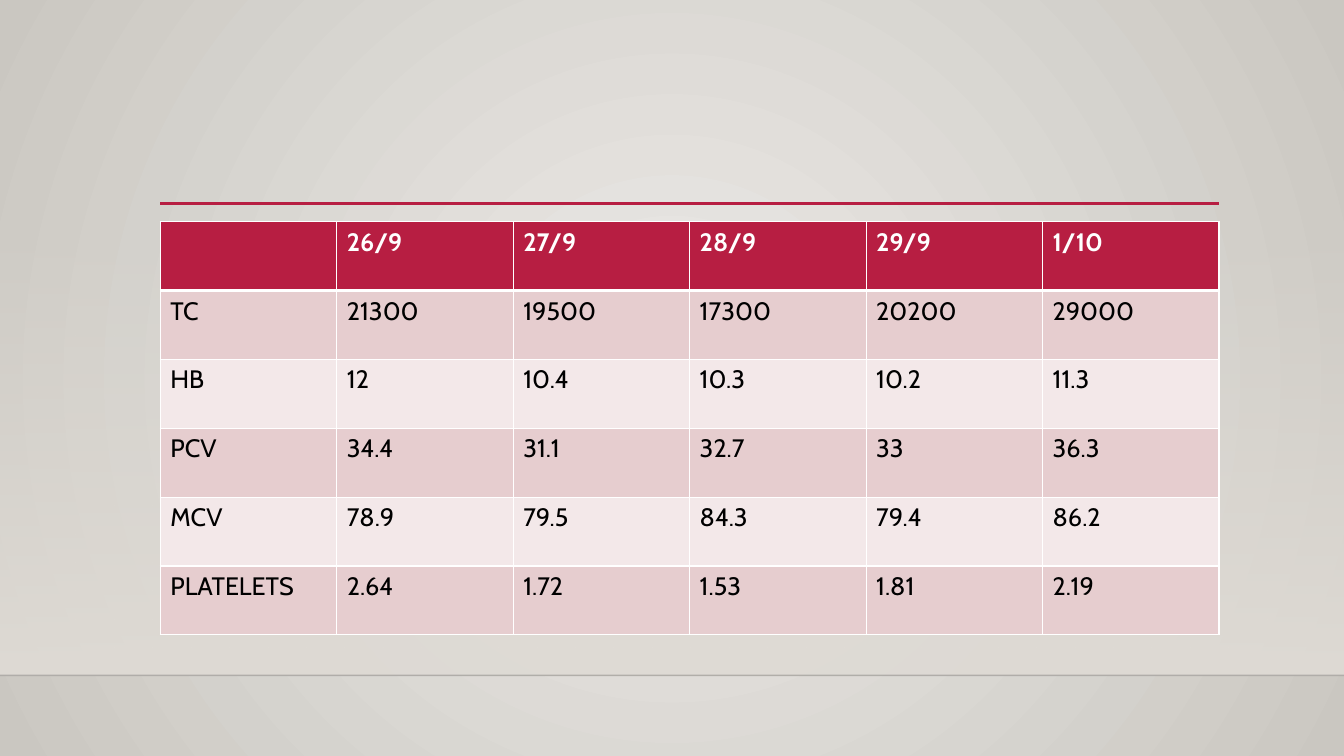
from pptx import Presentation
from pptx.dml.color import RGBColor
from pptx.enum.shapes import MSO_CONNECTOR, MSO_SHAPE
from pptx.oxml import parse_xml
from pptx.oxml.ns import nsdecls, qn
from pptx.util import Inches, Pt

CRIMSON = RGBColor(0xB7, 0x1E, 0x42)
ROSE = RGBColor(0xE6, 0xCD, 0xCF)
PALE_ROSE = RGBColor(0xF3, 0xE8, 0xE9)
WHITE = RGBColor(0xFF, 0xFF, 0xFF)
BLACK = RGBColor(0, 0, 0)
NEAR_BLACK = RGBColor(0, 0, 1)
LIGHT_STONE = RGBColor(0xEC, 0xEA, 0xE7)
DARK_STONE = RGBColor(0xCA, 0xC7, 0xC1)
STONE = RGBColor(0xDF, 0xDB, 0xD5)

FONT = "Cabin"
WIDTH, HEIGHT = Inches(13.33), Inches(7.5)
FLOOR = Inches(6.7)
RADIAL = ('<a:path path="circle"><a:fillToRect l="50000" t="50000" '
          'r="50000" b="50000"/></a:path>')
DOWNWARD = '<a:lin ang="5400000" scaled="0"/>'

BLOOD_COUNTS = [
    ["", "26/9", "27/9", "28/9", "29/9", "1/10"],
    ["TC", "21300", "19500", "17300", "20200", "29000"],
    ["HB", "12", "10.4", "10.3", "10.2", "11.3"],
    ["PCV", "34.4", "31.1", "32.7", "33", "36.3"],
    ["MCV", "78.9", "79.5", "84.3", "79.4", "86.2"],
    ["PLATELETS", "2.64", "1.72", "1.53", "1.81", "2.19"],
]


def set_gradient(parent, start, end, direction, start_alpha=100):
    """Replace the solid fill of parent with a two-stop gradient."""
    solid = parent.find(qn("a:solidFill"))
    parent.replace(solid, parse_xml(
        f'<a:gradFill {nsdecls("a")} rotWithShape="1"><a:gsLst>'
        f'<a:gs pos="0"><a:srgbClr val="{start}">'
        f'<a:alpha val="{start_alpha * 1000}"/></a:srgbClr></a:gs>'
        f'<a:gs pos="100000"><a:srgbClr val="{end}"/></a:gs>'
        f'</a:gsLst>{direction}</a:gradFill>'))


def add_rule(s, left, top, width, color, weight, opacity=100):
    line = s.shapes.add_connector(MSO_CONNECTOR.STRAIGHT,
                                  left, top, left + width, top)
    line.line.color.rgb = color
    line.line.width = Pt(weight)
    spPr = line._element.spPr
    spPr.append(parse_xml(f'<a:effectLst {nsdecls("a")}/>'))
    if opacity < 100:
        spPr.find(".//" + qn("a:srgbClr")).append(parse_xml(
            f'<a:alpha {nsdecls("a")} val="{opacity * 1000}"/>'))


def add_backdrop(s):
    # Radial background
    s.background.fill.solid()
    set_gradient(s.element.find(".//" + qn("p:bgPr")),
                 LIGHT_STONE, DARK_STONE, RADIAL)
    # Wall fading in towards the floor line
    top = Inches(2.21)
    wall = s.shapes.add_shape(MSO_SHAPE.RECTANGLE, 0, top, WIDTH, FLOOR - top)
    wall.shadow.inherit = False
    wall.line.fill.background()
    wall.fill.solid()
    set_gradient(wall._element.spPr, STONE, STONE, DOWNWARD, start_alpha=0)
    add_rule(s, 0, FLOOR, WIDTH, NEAR_BLACK, 1, opacity=20)


def set_borders(cell, weights):
    """Draw white borders; weights maps a side (L, R, T, B) to points."""
    tcPr = cell._tc.get_or_add_tcPr()
    for i, side in enumerate("LRTB"):
        tcPr.insert(i, parse_xml(
            f'<a:ln{side} {nsdecls("a")} w="{Pt(weights[side])}"><a:solidFill>'
            f'<a:srgbClr val="{WHITE}"/></a:solidFill></a:ln{side}>'))


def add_counts_table(s, left, top, width, height, data):
    rows, cols = len(data), len(data[0])
    table = s.shapes.add_table(rows, cols, left, top, width, height).table
    for column in table.columns:
        column.width = width // cols
    for r_index, values in enumerate(data):
        header = r_index == 0
        fill = CRIMSON if header else ROSE if r_index % 2 else PALE_ROSE
        weights = {"L": 1, "R": 1, "T": 3 if r_index == 1 else 1,
                   "B": 3 if header else 1}
        table.rows[r_index].height = height // rows
        for c_index, value in enumerate(values):
            cell = table.cell(r_index, c_index)
            cell.fill.solid()
            cell.fill.fore_color.rgb = fill
            set_borders(cell, weights)
            if value:
                r = cell.text_frame.paragraphs[0].add_run()
                r.text = value
                r.font.name = FONT
                r.font.size = Pt(18)
                r.font.bold = header
                r.font.color.rgb = WHITE if header else BLACK


def main():
    prs = Presentation()
    prs.slide_width, prs.slide_height = WIDTH, HEIGHT
    s = prs.slides.add_slide(prs.slide_layouts[6])
    add_backdrop(s)
    # Title rule and table share the left margin
    margin = Inches(1.59)
    add_rule(s, margin, Inches(2.02), Inches(10.5), CRIMSON, 2.5)
    add_counts_table(s, margin, Inches(2.2), Inches(10.5), Inches(4.1),
                     BLOOD_COUNTS)
    prs.save("out.pptx")


if __name__ == "__main__":
    main()
